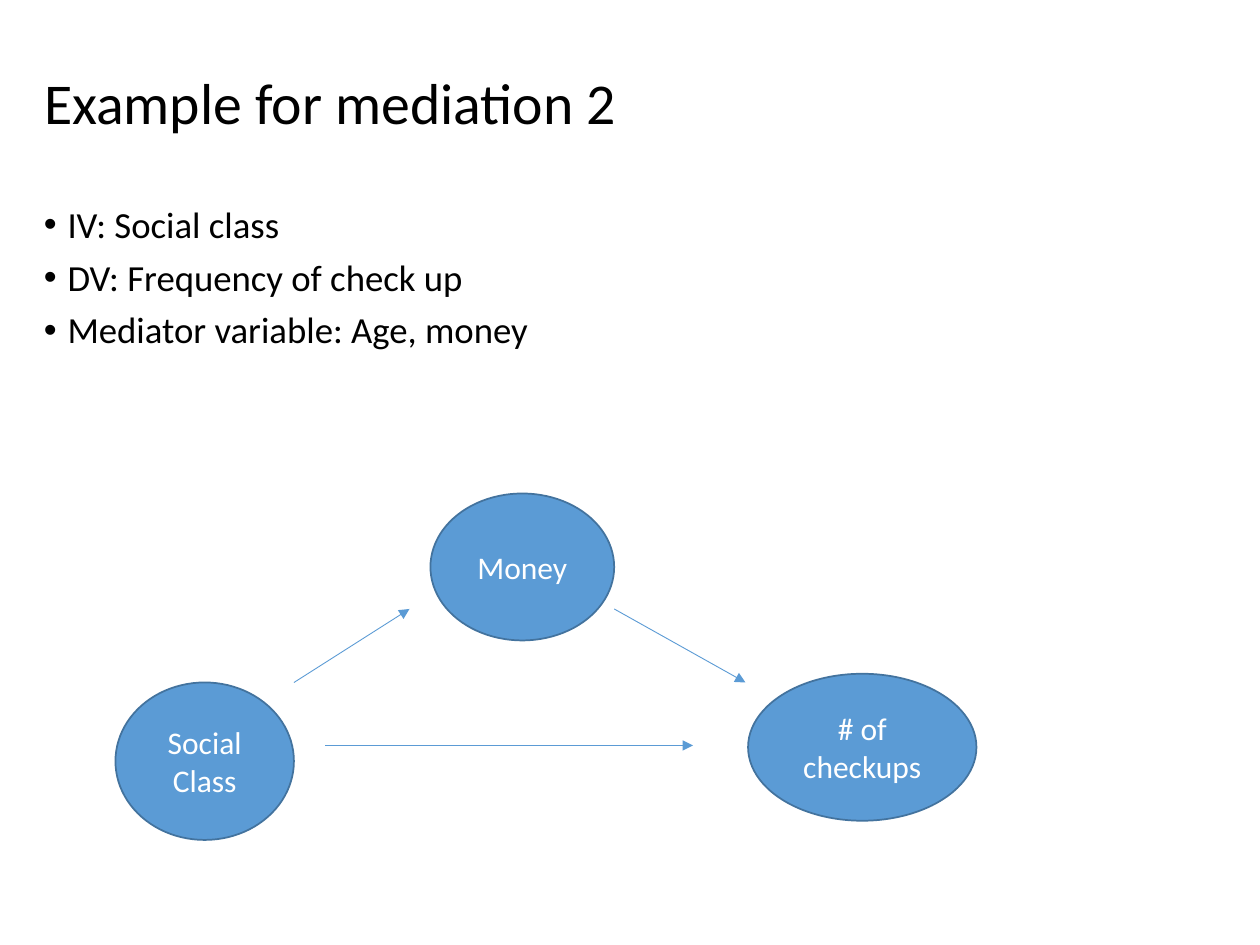
from lxml.etree import SubElement
from pptx import Presentation
from pptx.dml.color import RGBColor
from pptx.enum.shapes import MSO_CONNECTOR, MSO_SHAPE
from pptx.enum.text import MSO_ANCHOR, MSO_AUTO_SIZE, PP_ALIGN
from pptx.oxml.ns import qn
from pptx.util import Pt


def color(code):
    return RGBColor.from_string(code)


def assign(target, values):
    for name, value in values.items():
        setattr(target, name, value)


class Page:
    font = "Calibri"
    ink, paper = "000000", "FFFFFF"
    fill, edge = "5B9BD5", "43739E"

    def __init__(self, deck):
        self.slide = deck.slides.add_slide(deck.slide_layouts[5])
        self.shapes = self.slide.shapes

    def label(self, par, text, size, ink, **form):
        run = par.add_run()
        run.text = text
        assign(run.font, {"name": self.font, "size": Pt(size)})
        run.font.color.rgb = color(ink)
        assign(par, form)

    def title(self, text, box):
        shape = self.shapes.title
        assign(shape, dict(zip(("left", "top", "width", "height"), map(Pt, box))))
        frame = shape.text_frame
        assign(frame, {"vertical_anchor": MSO_ANCHOR.MIDDLE, "word_wrap": True,
                       "auto_size": MSO_AUTO_SIZE.NONE})
        self.label(frame.paragraphs[0], text, 33, self.ink,
                   alignment=PP_ALIGN.LEFT, line_spacing=0.9)

    def bullets(self, items, box):
        frame = self.shapes.add_textbox(*map(Pt, box)).text_frame
        frame.word_wrap = True
        for i, item in enumerate(items):
            par = frame.add_paragraph() if i else frame.paragraphs[0]
            self.label(par, item, 21, self.ink, line_spacing=0.9,
                       space_before=Pt(7.5))
            props = par._p.get_or_add_pPr()
            props.set("marL", str(int(Pt(13.5))))
            props.set("indent", str(-int(Pt(13.5))))
            SubElement(props, qn("a:buFont"), typeface="Arial")
            SubElement(props, qn("a:buChar"), char="•")

    def oval(self, text, box):
        shape = self.shapes.add_shape(MSO_SHAPE.OVAL, *map(Pt, box))
        shape.shadow.inherit = False
        shape.fill.solid()
        shape.fill.fore_color.rgb = color(self.fill)
        shape.line.color.rgb = color(self.edge)
        shape.line.width = Pt(1)
        frame = shape.text_frame
        assign(frame, {"vertical_anchor": MSO_ANCHOR.MIDDLE, "word_wrap": True})
        self.label(frame.paragraphs[0], text, 18, self.paper,
                   alignment=PP_ALIGN.CENTER)

    def arrow(self, start, end):
        link = self.shapes.add_connector(MSO_CONNECTOR.STRAIGHT,
                                         *map(Pt, start + end))
        link.line.color.rgb = color(self.fill)
        link.line.width = Pt(0.5)
        props = link._element.spPr
        SubElement(props.find(qn("a:ln")), qn("a:tailEnd"), type="triangle")
        SubElement(props, qn("a:effectLst"))


def main():
    deck = Presentation()
    assign(deck, {"slide_width": Pt(720), "slide_height": Pt(540)})
    page = Page(deck)

    # Title and variables
    page.title("Example for mediation 2", (18, 26, 648, 68.5))
    page.bullets(("IV: Social class", "DV: Frequency of check up",
                  "Mediator variable: Age, money"), (18, 114.5, 666, 114))

    # Variables of the model
    page.oval("Social Class", (66, 390, 102, 90))
    page.oval("# of checkups", (427.5, 385, 130.5, 84))
    page.oval("Money", (246, 282, 105, 84))

    # Direct path, then the two mediated paths
    page.arrow((186, 426), (396, 426))
    page.arrow((168, 390), (234, 348))
    page.arrow((351, 348), (426, 390))

    deck.save("out.pptx")


if __name__ == "__main__":
    main()
